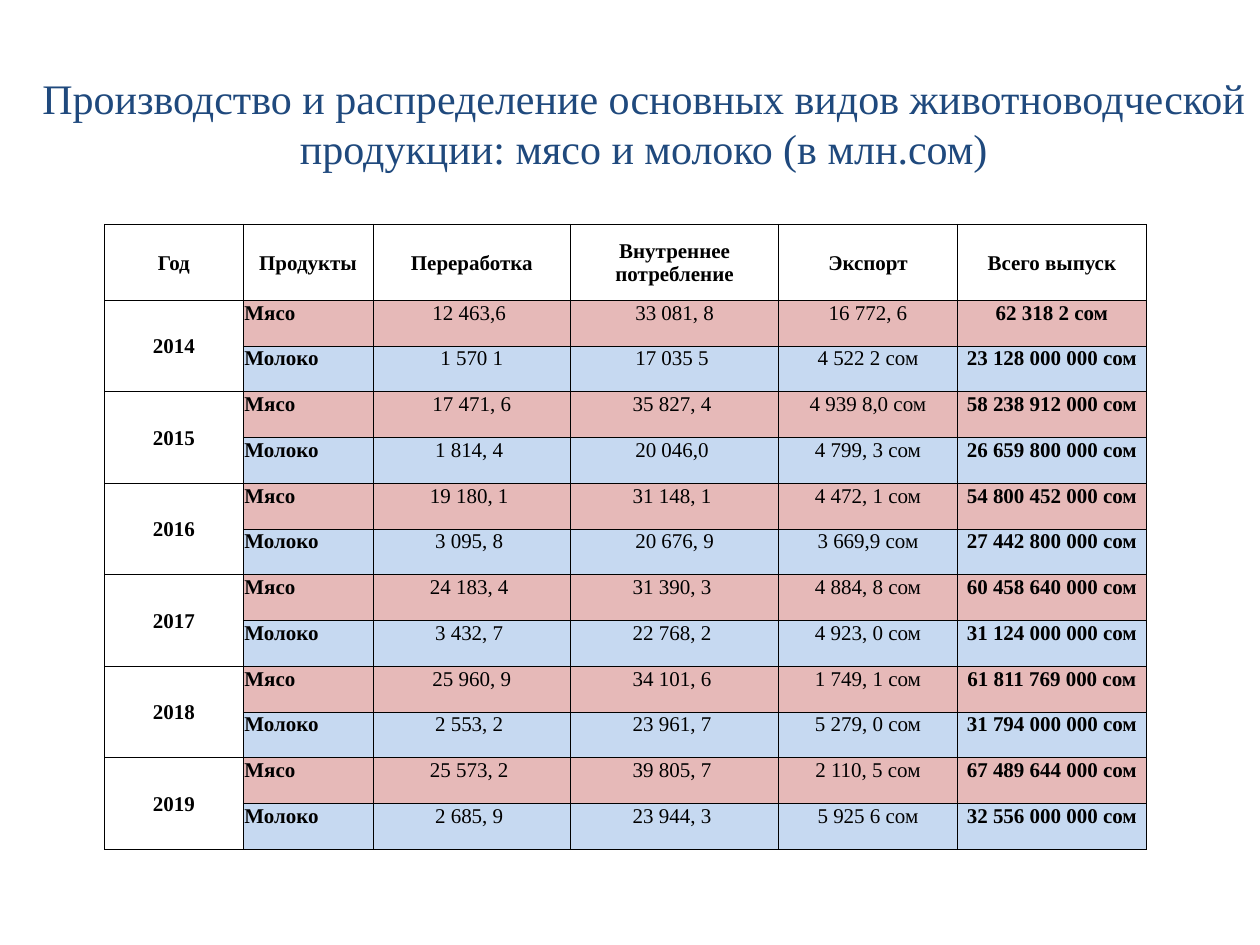
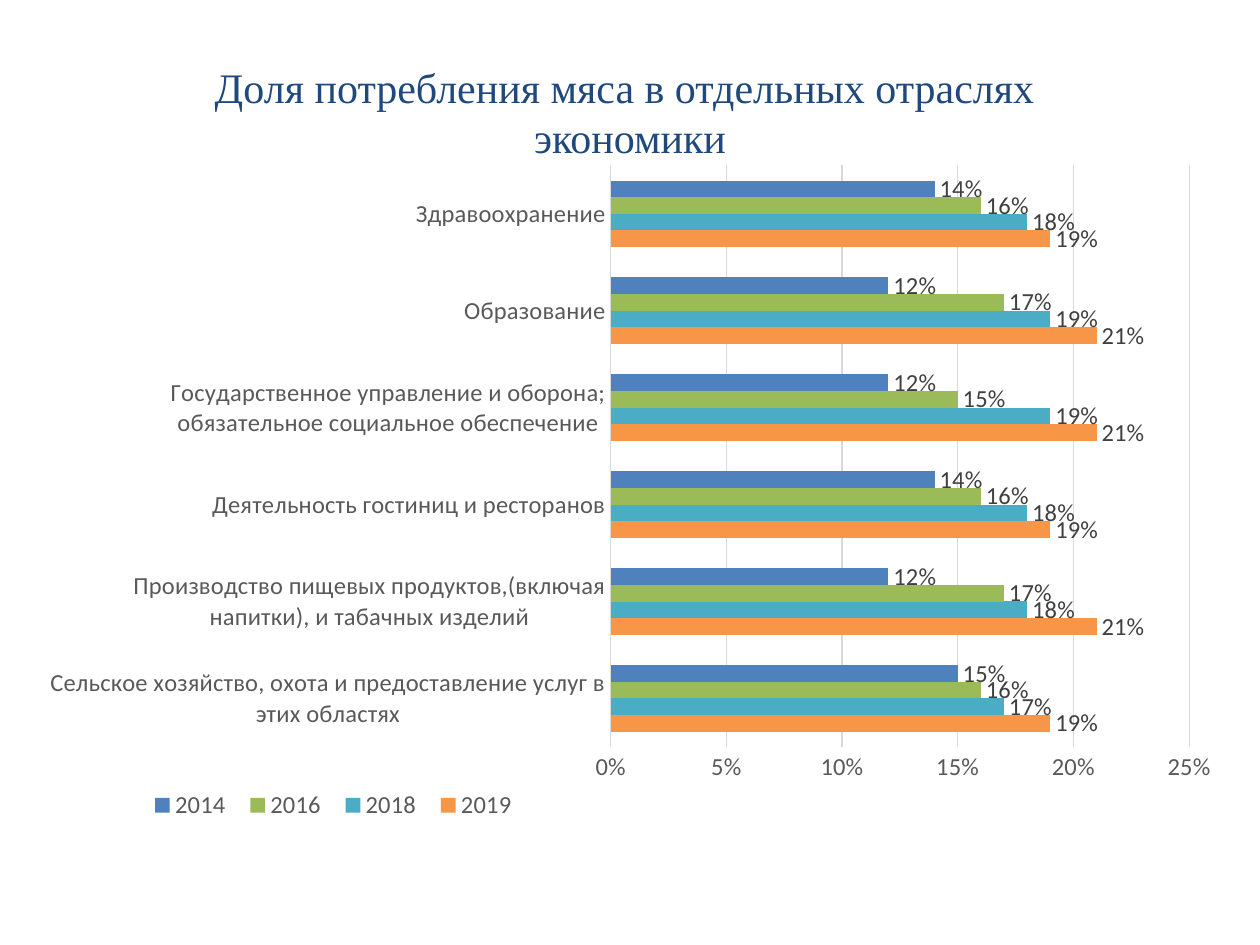
import pptx
import pptx.chart.data
import pptx.dml.color
import pptx.enum.chart
import pptx.enum.text
import pptx.oxml
import pptx.oxml.ns
import pptx.util

Pt = pptx.util.Pt
RGBColor = pptx.dml.color.RGBColor
ALIGN = pptx.enum.text.PP_ALIGN
ANCHOR = pptx.enum.text.MSO_ANCHOR

NAVY = RGBColor(0x1F, 0x49, 0x7D)
BLACK = RGBColor(0, 0, 0)
MEAT_PINK = RGBColor(0xE6, 0xB9, 0xB8)
MILK_BLUE = RGBColor(0xC6, 0xD9, 0xF1)
AXIS_GREY = RGBColor(0x59, 0x59, 0x59)
LABEL_GREY = RGBColor(0x40, 0x40, 0x40)
GRID_GREY = RGBColor(0xD9, 0xD9, 0xD9)
ORANGE = RGBColor(0xF7, 0x96, 0x46)
TEAL = RGBColor(0x4B, 0xAC, 0xC6)
GREEN = RGBColor(0x9B, 0xBB, 0x59)
BLUE = RGBColor(0x4F, 0x81, 0xBD)

SERIF = "Times New Roman"
SANS = "Calibri"
TITLE_ONLY = 5

HEADERS = ["Год", "Продукты", "Переработка", "Внутреннее потребление",
           "Экспорт", "Всего выпуск"]
COLUMN_WIDTHS = [79.2, 74.2, 113, 118.8, 102.2, 108]
HEADER_HEIGHT = 43.4
ROW_HEIGHT = 26.15
PRODUCTS = [("Мясо", MEAT_PINK), ("Молоко", MILK_BLUE)]
OUTPUT_BY_YEAR = {
    "2014": [("12 463,6 ", "33 081, 8", "16 772, 6", "62 318 2 сом"),
             ("1 570 1", "17 035 5 ", "4 522 2 сом", "23 128 000 000 сом")],
    "2015": [("17 471, 6", "35 827, 4 ", "4 939 8,0 сом", "58 238 912 000 сом"),
             ("1 814, 4 ", "20 046,0 ", "4 799, 3 сом", "26 659 800 000 сом")],
    "2016": [("19 180, 1 ", "31 148, 1 ", "4 472, 1 сом", "54 800 452 000 сом"),
             ("3 095, 8 ", "20 676, 9", "3 669,9 сом", "27 442 800 000 сом")],
    "2017": [("24 183, 4 ", "31 390, 3 ", "4 884, 8 сом", "60 458 640 000 сом"),
             ("3 432, 7 ", "22 768, 2 ", "4 923, 0 сом", "31 124 000 000 сом")],
    "2018": [("25 960, 9", "34 101, 6 ", "1 749, 1 сом", "61 811 769 000 сом"),
             ("2 553, 2 ", "23 961, 7 ", "5 279, 0 сом", "31 794 000 000 сом")],
    "2019": [("25 573, 2 ", "39 805, 7 ", "2 110, 5 сом", "67 489 644 000 сом"),
             ("2 685, 9 ", "23 944, 3 ", "5 925 6 сом", "32 556 000 000 сом")],
}

INDUSTRIES = [
    "Сельское хозяйство, охота и предоставление услуг в этих областях",
    "Производство пищевых продуктов,(включая напитки), и табачных изделий",
    "Деятельность гостиниц и ресторанов",
    "Государственное управление и оборона; обязательное социальное обеспечение",
    "Образование",
    "Здравоохранение",
]
MEAT_SHARES = [
    ("2019", ORANGE, (0.19, 0.21, 0.19, 0.21, 0.21, 0.19)),
    ("2018", TEAL, (0.17, 0.18, 0.18, 0.19, 0.19, 0.18)),
    ("2016", GREEN, (0.16, 0.17, 0.16, 0.15, 0.17, 0.16)),
    ("2014", BLUE, (0.15, 0.12, 0.14, 0.12, 0.12, 0.14)),
]


def format_font(font, name, size, color, bold=False):
    font.name = name
    font.size = Pt(size)
    font.color.rgb = color
    font.bold = bold


def add_titled_slide(presentation, lines, left, top, width, height):
    slide = presentation.slides.add_slide(presentation.slide_layouts[TITLE_ONLY])
    title = slide.shapes.title
    title.left, title.top = Pt(left), Pt(top)
    title.width, title.height = Pt(width), Pt(height)
    frame = title.text_frame
    frame.word_wrap = True
    frame.auto_size = pptx.enum.text.MSO_AUTO_SIZE.NONE
    frame.vertical_anchor = ANCHOR.MIDDLE
    paragraph = frame.paragraphs[0]
    paragraph.alignment = ALIGN.CENTER
    for index, line in enumerate(lines):
        if index:
            paragraph.add_line_break()
        run = paragraph.add_run()
        run.text = line
        format_font(run.font, SERIF, 24, NAVY)
    return slide


def add_borders(cell):
    properties = cell._tc.get_or_add_tcPr()
    for side in "LRTB":
        properties.append(pptx.oxml.parse_xml(
            f'<a:ln{side} {pptx.oxml.ns.nsdecls("a")} w="{Pt(0.5)}">'
            f'<a:solidFill><a:srgbClr val="{BLACK}"/></a:solidFill></a:ln{side}>'))


def fill_cell(cell, text, bold=True, fill=None, alignment=ALIGN.CENTER):
    cell.margin_left = cell.margin_right = cell.margin_top = Pt(0.7)
    cell.margin_bottom = 0
    cell.vertical_anchor = ANCHOR.TOP if fill else ANCHOR.MIDDLE
    paragraph = cell.text_frame.paragraphs[0]
    paragraph.alignment = alignment
    run = paragraph.add_run()
    run.text = text
    format_font(run.font, SERIF, 12, BLACK, bold)
    if fill:
        cell.fill.solid()
        cell.fill.fore_color.rgb = fill


def add_output_table(slide):
    row_count = 1 + len(PRODUCTS) * len(OUTPUT_BY_YEAR)
    height = HEADER_HEIGHT + ROW_HEIGHT * (row_count - 1)
    table = slide.shapes.add_table(
        row_count, len(HEADERS), Pt(59.75), Pt(128.2),
        Pt(sum(COLUMN_WIDTHS)), Pt(height)).table
    table.first_row = table.horz_banding = False
    for column, width in zip(table.columns, COLUMN_WIDTHS):
        column.width = Pt(width)
    for index, row in enumerate(table.rows):
        row.height = Pt(ROW_HEIGHT if index else HEADER_HEIGHT)
    for cell in table.iter_cells():
        add_borders(cell)
        cell.fill.background()

    for column, header in enumerate(HEADERS):
        fill_cell(table.cell(0, column), header)
    for year_index, (year, records) in enumerate(OUTPUT_BY_YEAR.items()):
        first_row = 1 + year_index * len(PRODUCTS)
        year_cell = table.cell(first_row, 0)
        year_cell.merge(table.cell(first_row + len(PRODUCTS) - 1, 0))
        fill_cell(year_cell, year)
        for row, ((product, color), amounts) in enumerate(zip(PRODUCTS, records), first_row):
            fill_cell(table.cell(row, 1), product, fill=color, alignment=ALIGN.LEFT)
            for column, amount in enumerate(amounts, 2):
                is_total = column == len(HEADERS) - 1
                fill_cell(table.cell(row, column), amount, bold=is_total, fill=color)


def manual_layout(left, top, width, height, inner=False):
    target = '<c:layoutTarget val="inner"/>' if inner else ""
    return pptx.oxml.parse_xml(
        f'<c:layout {pptx.oxml.ns.nsdecls("c")}><c:manualLayout>{target}'
        '<c:xMode val="edge"/><c:yMode val="edge"/>'
        f'<c:x val="{left}"/><c:y val="{top}"/>'
        f'<c:w val="{width}"/><c:h val="{height}"/></c:manualLayout></c:layout>')


def set_layout(element, layout, position):
    for existing in element.findall(pptx.oxml.ns.qn("c:layout")):
        element.remove(existing)
    element.insert(position, layout)


def format_axis(axis):
    axis.major_tick_mark = axis.minor_tick_mark = pptx.enum.chart.XL_TICK_MARK.NONE
    format_font(axis.tick_labels.font, SANS, 14, AXIS_GREY)


def format_grey_line(line):
    line.color.rgb = GRID_GREY
    line.width = Pt(0.75)


def format_series(series, color):
    series.format.fill.solid()
    series.format.fill.fore_color.rgb = color
    series.invert_if_negative = False
    labels = series.data_labels
    labels.show_value = True
    labels.number_format = "0%"
    labels.number_format_is_linked = False
    labels.position = pptx.enum.chart.XL_LABEL_POSITION.OUTSIDE_END
    format_font(labels.font, SANS, 14, LABEL_GREY)


def add_share_chart(slide):
    data = pptx.chart.data.CategoryChartData(number_format="0%")
    data.categories = INDUSTRIES
    for year, _, shares in MEAT_SHARES:
        data.add_series(year, shares)
    chart = slide.shapes.add_chart(
        pptx.enum.chart.XL_CHART_TYPE.BAR_CLUSTERED,
        Pt(25.2), Pt(82.8), Pt(674.6), Pt(391), data).chart
    chart.has_title = False
    format_font(chart.font, SANS, 14, BLACK)

    plot = chart.plots[0]
    plot.gap_width = 182
    plot.vary_by_categories = False
    for series, (_, color, _) in zip(plot.series, MEAT_SHARES):
        format_series(series, color)

    format_axis(chart.category_axis)
    format_grey_line(chart.category_axis.format.line)
    value_axis = chart.value_axis
    format_axis(value_axis)
    value_axis.minimum_scale, value_axis.maximum_scale = 0, 0.25
    value_axis.major_unit = 0.05
    value_axis.tick_labels.number_format = "0%"
    value_axis.tick_labels.number_format_is_linked = False
    value_axis.format.line.fill.background()
    format_grey_line(value_axis.major_gridlines.format.line)

    chart.has_legend = True
    legend = chart.legend
    legend.position = pptx.enum.chart.XL_LEGEND_POSITION.BOTTOM
    legend.include_in_layout = False
    format_font(legend.font, SANS, 14, AXIS_GREY)
    set_layout(legend._element, manual_layout(0.08, 0.93, 0.33, 0.07), 1)
    plot_area = plot._element.getparent()
    set_layout(plot_area, manual_layout(0.48, 0.03, 0.49, 0.85, inner=True), 0)


def main():
    presentation = pptx.Presentation()
    presentation.slide_width, presentation.slide_height = Pt(720), Pt(540)
    table_slide = add_titled_slide(
        presentation,
        ["Производство и распределение основных видов животноводческой",
         "продукции: мясо и молоко (в млн.сом)"],
        15.8, 22, 704.2, 96)
    add_output_table(table_slide)
    chart_slide = add_titled_slide(
        presentation,
        ["Доля потребления мяса в отдельных отраслях ", "экономики"],
        36, 22, 648, 84)
    add_share_chart(chart_slide)
    presentation.save("out.pptx")


if __name__ == "__main__":
    main()
